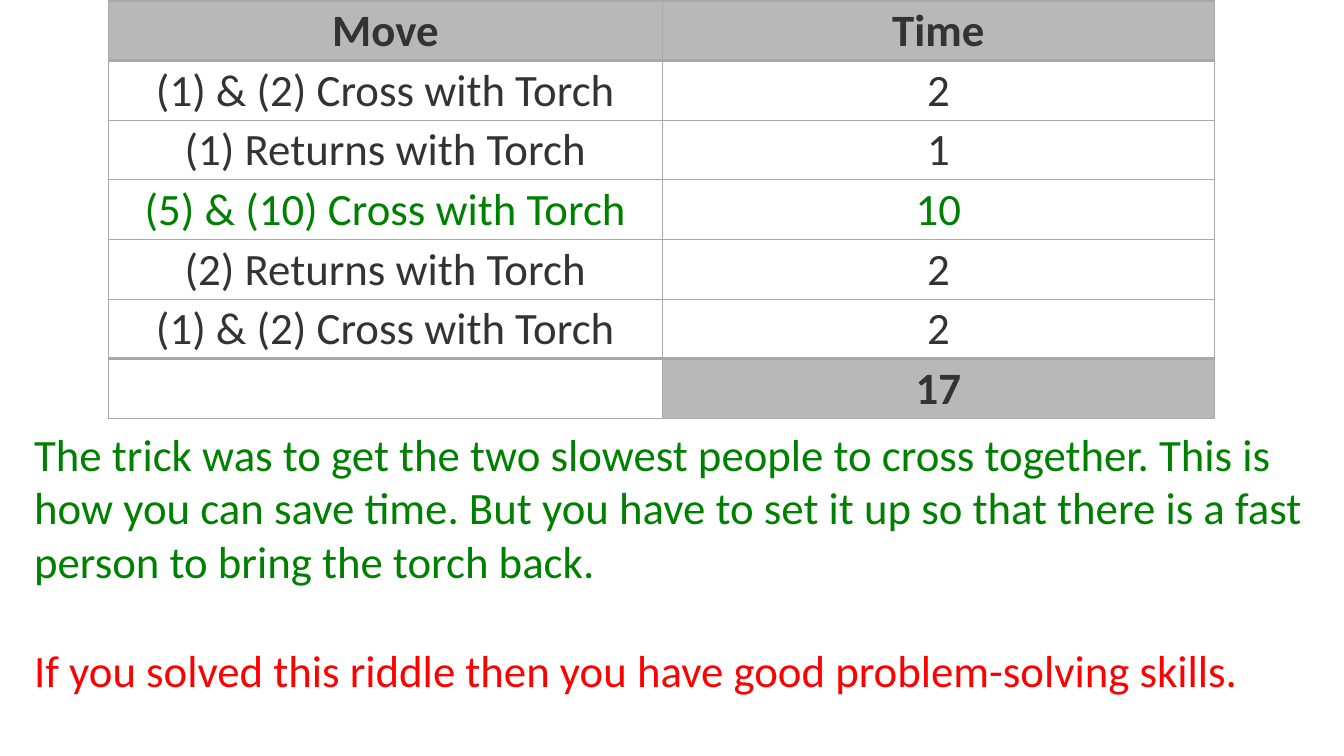
from dataclasses import dataclass

from lxml import etree
from pptx import Presentation
from pptx.dml.color import RGBColor
from pptx.enum.text import MSO_ANCHOR, PP_ALIGN
from pptx.oxml.ns import qn
from pptx.util import Inches, Pt

CENTER = PP_ALIGN.CENTER
MIDDLE = MSO_ANCHOR.MIDDLE

COLORS = {
    "text": "333333",
    "green": "008000",
    "red": "FF0000",
    "band": "B8B8B8",
    "white": "FFFFFF",
    "border": "A9A9A9",
}
FONT_FORMAT = {"name": "Calibri", "size": Pt(32)}
CELL_FORMAT = {
    "vertical_anchor": MIDDLE,
    "margin_left": Inches(0.01),
    "margin_right": Inches(0.01),
    "margin_top": Inches(0.01),
    "margin_bottom": 0,
}
OUTER, INNER, HEAVY = 1, 0.5, 2


@dataclass
class Move:
    action: str
    time: str
    color: str = "text"
    bold: bool = False


@dataclass
class Remark:
    text: str
    color: str
    space_before: float = 0


MOVES = [
    Move("Move", "Time", bold=True),
    Move("(1) & (2) Cross with Torch", "2"),
    Move("(1) Returns with Torch", "1"),
    Move("(5) & (10) Cross with Torch", "10", "green"),
    Move("(2) Returns with Torch", "2"),
    Move("(1) & (2) Cross with Torch", "2"),
    Move("", "17", bold=True),
]
REMARKS = [
    Remark("The trick was to get the two slowest people to cross together. "
           "This is how you can save time. But you have to set it up so that "
           "there is a fast person to bring the torch back.", "green"),
    Remark("If you solved this riddle then you have good problem-solving "
           "skills.", "red", space_before=39),
]


def apply_format(target, values: dict) -> None:
    for name, value in values.items():
        setattr(target, name, value)


def write(paragraph, text: str, color: str, bold: bool = False) -> None:
    run = paragraph.add_run()
    run.text = text
    apply_format(run.font, FONT_FORMAT | {"bold": bold})
    run.font.color.rgb = RGBColor.from_string(COLORS[color])


def add_borders(cell, widths: dict[str, float]) -> None:
    properties = cell._tc.get_or_add_tcPr()
    for side, width in widths.items():
        line = etree.SubElement(properties, qn(f"a:ln{side}"), w=str(Pt(width)))
        fill = etree.SubElement(line, qn("a:solidFill"))
        etree.SubElement(fill, qn("a:srgbClr"), val=COLORS["border"])


def rule_width(position: int) -> float:
    """Width of the horizontal rule above the row at this position."""
    if position in (0, len(MOVES)):
        return OUTER
    return HEAVY if position in (1, len(MOVES) - 1) else INNER


def add_moves_table(slide) -> None:
    frame = slide.shapes.add_table(len(MOVES), 2, Inches(1.08), Inches(0.01),
                                   Inches(10.97), Inches(4.14))
    table = frame.table
    apply_format(table, {"first_row": False, "horz_banding": False})
    for row, move in enumerate(MOVES):
        for column, text in enumerate((move.action, move.time)):
            cell = table.cell(row, column)
            apply_format(cell, CELL_FORMAT)
            add_borders(cell, {
                "L": INNER if column else OUTER,
                "R": OUTER if column else INNER,
                "T": rule_width(row),
                "B": rule_width(row + 1),
            })
            fill = "band" if move.bold and text else "white"
            cell.fill.solid()
            cell.fill.fore_color.rgb = RGBColor.from_string(COLORS[fill])
            if text:
                paragraph = cell.text_frame.paragraphs[0]
                paragraph.alignment = CENTER
                write(paragraph, text, move.color, move.bold)


def add_remarks(slide) -> None:
    box = slide.shapes.add_textbox(Inches(0.24), Inches(4.18),
                                   Inches(12.86), Inches(2.79))
    text_frame = box.text_frame
    text_frame.word_wrap = True
    for index, remark in enumerate(REMARKS):
        paragraph = text_frame.add_paragraph() if index else text_frame.paragraphs[0]
        if remark.space_before:
            paragraph.space_before = Pt(remark.space_before)
        write(paragraph, remark.text, remark.color)


def main() -> None:
    presentation = Presentation()
    presentation.slide_width = Inches(13.33)
    presentation.slide_height = Inches(7.5)
    slide = presentation.slides.add_slide(presentation.slide_layouts[6])

    # Table of moves with the total time
    add_moves_table(slide)

    # Explanation below the table
    add_remarks(slide)

    presentation.save("out.pptx")


if __name__ == "__main__":
    main()
